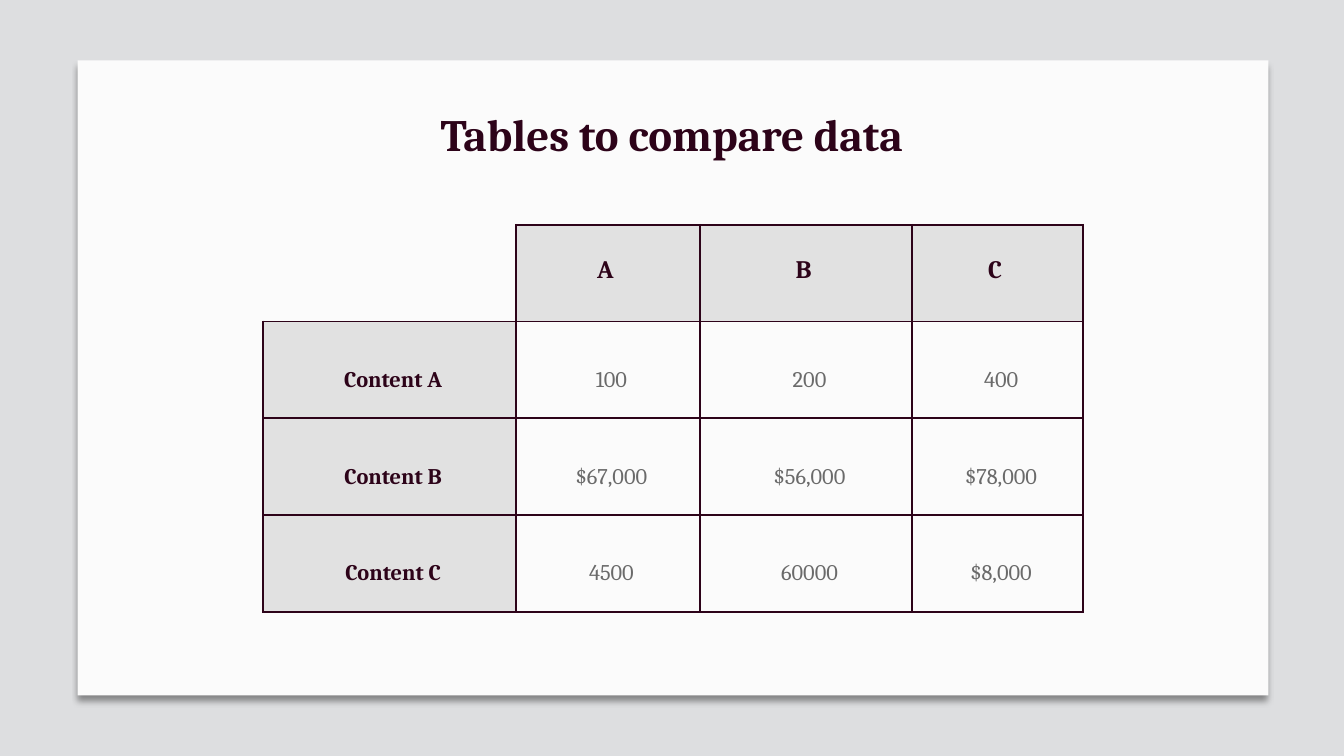
from lxml import etree
from pptx import Presentation
from pptx.dml.color import RGBColor
from pptx.enum.shapes import MSO_SHAPE
from pptx.enum.text import MSO_ANCHOR, PP_ALIGN
from pptx.oxml import parse_xml
from pptx.oxml.ns import nsdecls, qn
from pptx.util import Inches, Pt

RECTANGLE = MSO_SHAPE.RECTANGLE
TOP, MIDDLE = MSO_ANCHOR.TOP, MSO_ANCHOR.MIDDLE
CENTER = PP_ALIGN.CENTER

BACKDROP = RGBColor(0xDD, 0xDE, 0xE0)
PAPER = RGBColor(0xFB, 0xFB, 0xFB)
HEADING_FILL = RGBColor(0xE1, 0xE1, 0xE1)
PLUM = RGBColor(0x2D, 0x03, 0x19)
GREY = RGBColor(0x6A, 0x6A, 0x6A)

TITLE_ONLY = 5
COLUMN_WIDTHS = [2.51, 1.82, 2.11, 1.69]
ROW_HEIGHT = 0.96
HEADER_INSETS = (0, 0.31, 0.05, 0)
BODY_INSETS = (0.12, 0.22, 0.05, 0.02)
ROWS = [
    ["", "A", "B", "C"],
    ["Content A", "100", "200", "400"],
    ["Content B", "$67,000", "$56,000", "$78,000"],
    ["Content C", "4500", "60000", "$8,000"],
]


class SlideBuilder:
    font = "Cambria"
    border_width = Pt(1.5)

    def __init__(self, prs):
        self.s = prs.slides.add_slide(prs.slide_layouts[TITLE_ONLY])
        fill = self.s.background.fill
        fill.solid()
        fill.fore_color.rgb = BACKDROP

    def style(self, p, size, color, bold):
        p.alignment = CENTER
        p.font.name = self.font
        p.font.size = Pt(size)
        p.font.color.rgb = color
        p.font.bold = bold

    def title(self, text, left, top, width, height):
        sp = self.s.shapes.title
        sp.left, sp.top = Inches(left), Inches(top)
        sp.width, sp.height = Inches(width), Inches(height)
        tf = sp.text_frame
        tf.text = text
        tf.word_wrap = True
        tf.vertical_anchor = TOP
        self.style(tf.paragraphs[0], 32, PLUM, True)

    def panel(self, left, top, width, height):
        sp = self.s.shapes.add_shape(RECTANGLE, Inches(left), Inches(top),
                                     Inches(width), Inches(height))
        sp.fill.solid()
        sp.fill.fore_color.rgb = PAPER
        sp.line.fill.background()
        sp.shadow.inherit = False
        effects = sp.element.spPr.find(qn("a:effectLst"))
        effects.append(parse_xml(
            f'<a:outerShdw {nsdecls("a")} blurRad="{Pt(4)}" dist="{Pt(5)}" '
            'dir="5400000" algn="t" rotWithShape="0"><a:srgbClr val="000000">'
            '<a:alpha val="40000"/></a:srgbClr></a:outerShdw>'))
        # Keep the panel behind the title
        self.s.shapes.title.element.addprevious(sp.element)

    def borders(self, cell, visible):
        tc_pr = cell._tc.get_or_add_tcPr()
        for side in "LRTB":
            line = etree.SubElement(tc_pr, qn(f"a:ln{side}"))
            if side in visible:
                line.set("w", str(self.border_width))
                fill = etree.SubElement(line, qn("a:solidFill"))
                etree.SubElement(fill, qn("a:srgbClr"), val=str(PLUM))
            else:
                etree.SubElement(line, qn("a:noFill"))

    def cell(self, cell, text, is_header, is_label):
        if not text:
            self.borders(cell, "RB")
            cell.fill.background()
            return
        self.borders(cell, "LRTB")
        heading = is_header or is_label
        cell.fill.solid()
        cell.fill.fore_color.rgb = HEADING_FILL if heading else PAPER
        insets = HEADER_INSETS if is_header else BODY_INSETS
        (cell.margin_left, cell.margin_top,
         cell.margin_right, cell.margin_bottom) = map(Inches, insets)
        cell.vertical_anchor = TOP if is_header else MIDDLE
        cell.text = text
        self.style(cell.text_frame.paragraphs[0], 18 if is_header else 16,
                   PLUM if heading else GREY, heading)

    def table(self, rows, left, top):
        frame = self.s.shapes.add_table(
            len(rows), len(COLUMN_WIDTHS), Inches(left), Inches(top),
            Inches(sum(COLUMN_WIDTHS)), Inches(ROW_HEIGHT * len(rows)))
        table = frame.table
        table.first_row = table.horz_banding = False
        for column, width in zip(table.columns, COLUMN_WIDTHS):
            column.width = Inches(width)
        for i, texts in enumerate(rows):
            table.rows[i].height = Inches(ROW_HEIGHT)
            for j, text in enumerate(texts):
                self.cell(table.cell(i, j), text, i == 0, j == 0)


def main():
    prs = Presentation()
    prs.slide_width, prs.slide_height = Inches(13.33), Inches(7.5)
    builder = SlideBuilder(prs)

    # Paper panel and heading
    builder.panel(0.77, 0.6, 11.81, 6.3)
    builder.title("Tables to compare data", 2.58, 1.01, 8.17, 0.64)

    # Comparison table
    builder.table(ROWS, 2.61, 2.23)

    prs.save("out.pptx")


if __name__ == "__main__":
    main()
